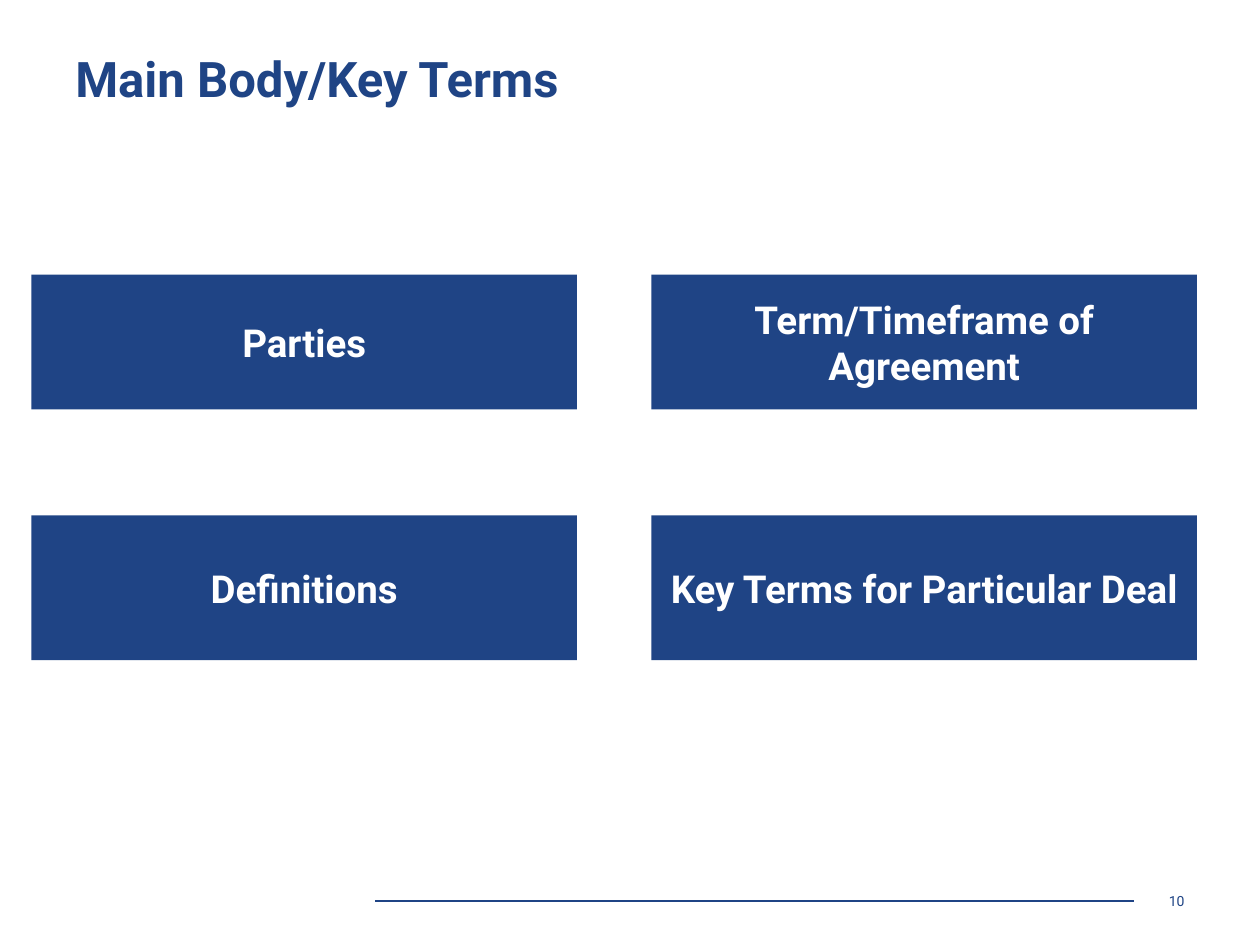
from lxml import etree
from pptx import Presentation
from pptx import util as u
from pptx.dml.color import RGBColor
from pptx.enum import shapes, text
from pptx.oxml.ns import qn

NAVY = RGBColor(0x1F, 0x44, 0x85)
WHITE = RGBColor(0xFF, 0xFF, 0xFF)
WIDTH, HEIGHT = 10, 7.5
COLUMNS = (0.25, 5.17)
ROWS = ((2.18, 1.07), (4.09, 1.15))
CARD_WIDTH = 4.33
TERMS = (
    ("Parties", "Term/Timeframe of Agreement"),
    ("Definitions", "Key Terms for Particular Deal"),
)


def write(sp, words, size, color=NAVY, bold=False, align=text.PP_ALIGN.LEFT, after=0):
    tf = sp.text_frame
    tf.word_wrap = True
    tf.vertical_anchor = text.MSO_ANCHOR.MIDDLE
    p = tf.paragraphs[0]
    p.alignment = align
    p.space_after = u.Pt(after)
    r = p.add_run()
    r.text = words
    r.font.name = "Roboto"
    r.font.size = u.Pt(size)
    r.font.bold = bold
    r.font.color.rgb = color


class Deck:
    def __init__(self):
        self.prs = Presentation()
        self.prs.slide_width = u.Inches(WIDTH)
        self.prs.slide_height = u.Inches(HEIGHT)
        self.s = self.prs.slides.add_slide(self.prs.slide_layouts[6])

    def share(self, x, y):
        return int(self.prs.slide_width * x / WIDTH), int(self.prs.slide_height * y / HEIGHT)

    def label(self, x, y, w, h, words, size, **style):
        sp = self.s.shapes.add_textbox(*self.share(x, y), *self.share(w, h))
        write(sp, words, size, **style)

    def card(self, x, y, w, h, words):
        sp = self.s.shapes.add_shape(
            shapes.MSO_SHAPE.RECTANGLE, *self.share(x, y), *self.share(w, h))
        sp.shadow.inherit = False
        sp.fill.solid()
        sp.fill.fore_color.rgb = NAVY
        sp.line.fill.background()
        write(sp, words, 22, color=WHITE, bold=True,
              align=text.PP_ALIGN.CENTER, after=10)

    def rule(self, x1, x2, y):
        line = self.s.shapes.add_connector(
            shapes.MSO_CONNECTOR.STRAIGHT, *self.share(x1, y), *self.share(x2, y))
        line.line.color.rgb = NAVY
        line.line.width = u.Pt(1.5)
        etree.SubElement(line._element.spPr, qn("a:effectLst"))


def main():
    deck = Deck()
    deck.rule(2.98, 9, 7.15)
    deck.label(0.5, 0.08, 9, 1.08, "Main Body/Key Terms", 28, bold=True)
    deck.label(9, 6.95, 0.5, 0.4, "10", 8, align=text.PP_ALIGN.RIGHT)
    for (y, h), terms in zip(ROWS, TERMS):
        for x, term in zip(COLUMNS, terms):
            deck.card(x, y, CARD_WIDTH, h, term)
    deck.prs.save("out.pptx")


if __name__ == "__main__":
    main()
